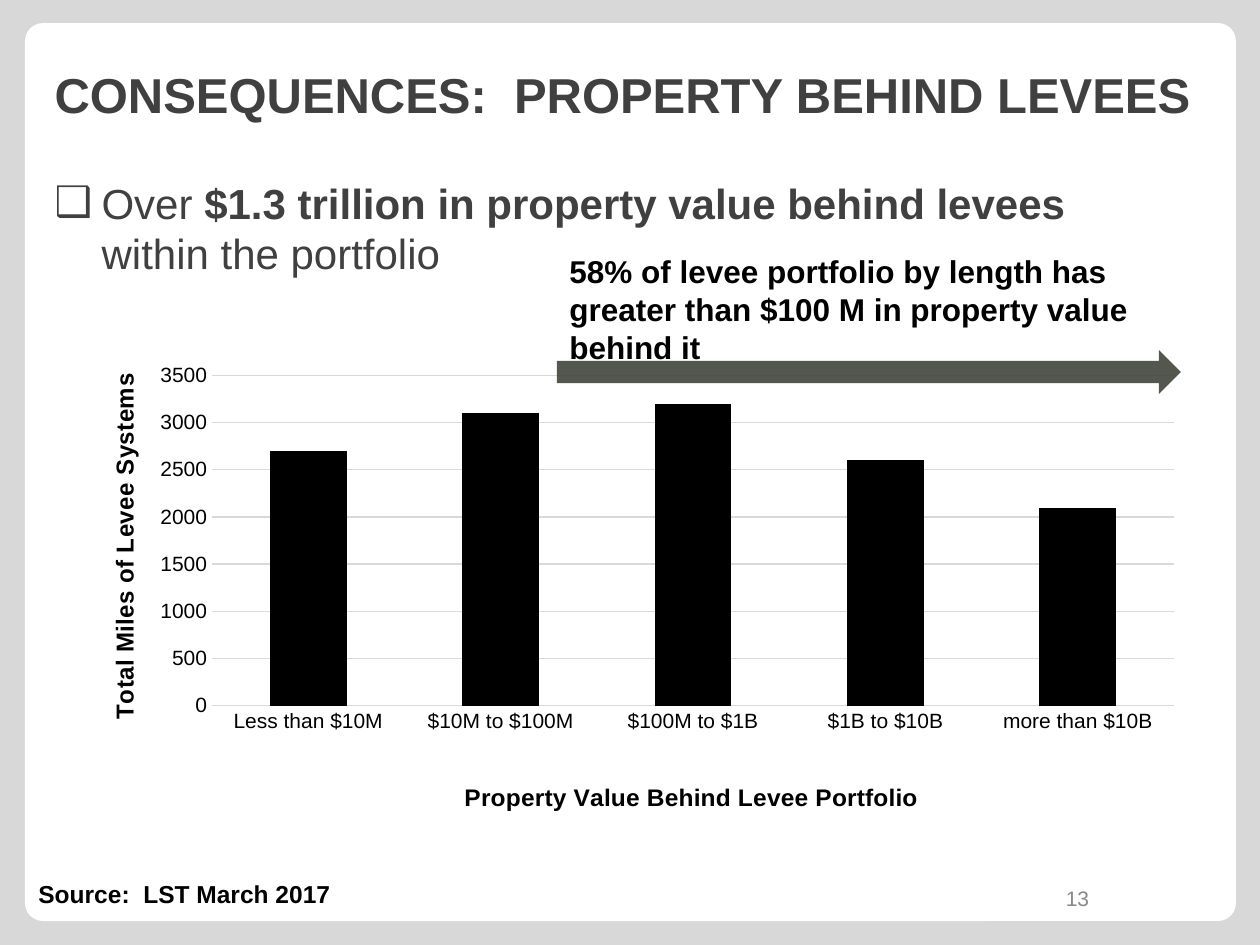
from lxml import etree
from pptx import Presentation, util as u
from pptx.chart.data import CategoryChartData
from pptx.dml.color import RGBColor
from pptx.enum import chart as charts, shapes, text
from pptx.oxml import parse_xml
from pptx.oxml.ns import nsdecls, qn

# Content: each paragraph is a list of (text, bold) runs
TITLE = [[("CONSEQUENCES:  PROPERTY BEHIND LEVEES", True)]]
BODY = [[("Over ", False),
         ("$1.3 trillion in property value behind levees ", True),
         ("within the portfolio", False)]]
CALLOUT = [[("58% of levee portfolio by length has", True)],
           [("greater than $100 M in property value behind it", True)]]
SOURCE = [[("Source:  LST March 2017", True)]]
PAGE_NUMBER = [[("13", False)]]
MILES = {"Less than $10M": 2700, "$10M to $100M": 3100, "$100M to $1B": 3200,
         "$1B to $10B": 2600, "more than $10B": 2100}
CATEGORY_TITLE = "Property Value Behind Levee Portfolio"
VALUE_TITLE = "Total Miles of Levee Systems"

FONT = "Arial"
BLACK, GREY, GRID = "000000", "404040", "D9D9D9"
CHART_BOX = (73, 357, 1124, 462)


def px(value):
    return u.Emu(round(value * 914400 / 126))


def color(value):
    return RGBColor.from_string(value)


def place(shape, box):
    shape.left, shape.top, shape.width, shape.height = map(px, box)


def set_font(font, size, fill=BLACK, bold=False):
    font.name, font.size, font.bold = FONT, u.Pt(size), bold
    font.color.rgb = color(fill)


def write(shape, paragraphs, size, fill=BLACK, align=text.PP_ALIGN.LEFT,
          anchor=text.MSO_ANCHOR.TOP, wrap=True, bullet=None, indent=0):
    frame = shape.text_frame
    frame.word_wrap, frame.vertical_anchor = wrap, anchor
    frame.auto_size = text.MSO_AUTO_SIZE.NONE
    for index, runs in enumerate(paragraphs):
        paragraph = frame.add_paragraph() if index else frame.paragraphs[0]
        paragraph.alignment, paragraph.space_before = align, u.Pt(0)
        if bullet:
            properties = paragraph._p.get_or_add_pPr()
            properties.set("marL", str(px(indent)))
            properties.set("indent", str(-px(indent)))
            etree.SubElement(properties, qn("a:buFont")).set("typeface", FONT)
            etree.SubElement(properties, qn("a:buChar")).set("char", bullet)
        for words, bold in runs:
            run = paragraph.add_run()
            run.text = words
            set_font(run.font, size, fill, bold)


def add_preset(slide, preset, box, fill):
    shape = slide.shapes.add_shape(preset, *map(px, box))
    shape.shadow.inherit = False
    shape.fill.solid()
    shape.fill.fore_color.rgb = color(fill)
    shape.line.fill.background()
    return shape


def chart_layout(left, top, width=None, height=None):
    """Manual layout from slide px, as fractions of the chart box."""
    chart_left, chart_top, chart_width, chart_height = CHART_BOX
    parts = {"xMode": "edge", "yMode": "edge",
             "x": round((left - chart_left) / chart_width, 4),
             "y": round((top - chart_top) / chart_height, 4)}
    if width:
        parts = {"layoutTarget": "inner", **parts,
                 "w": round(width / chart_width, 4), "h": round(height / chart_height, 4)}
    tags = "".join(f'<c:{name} val="{value}"/>' for name, value in parts.items())
    return parse_xml(f'<c:layout {nsdecls("c")}><c:manualLayout>{tags}'
                     '</c:manualLayout></c:layout>')


def format_axis(axis, title, left, top):
    axis.major_tick_mark = axis.minor_tick_mark = charts.XL_TICK_MARK.NONE
    set_font(axis.tick_labels.font, 12)
    frame = axis.axis_title.text_frame
    frame.text = title
    set_font(frame.paragraphs[0].runs[0].font, 14, bold=True)
    element = axis.axis_title._element
    for old in element.findall(qn("c:layout")):
        element.remove(old)
    element.find(qn("c:tx")).addnext(chart_layout(left, top))


def add_miles_chart(slide):
    data = CategoryChartData()
    data.categories = list(MILES)
    data.add_series("Series 1", list(MILES.values()))
    chart = slide.shapes.add_chart(charts.XL_CHART_TYPE.COLUMN_STACKED,
                                   *map(px, CHART_BOX), data).chart
    set_font(chart.font, 10)
    chart.has_legend = chart.has_title = False

    plot = chart.plots[0]
    plot.gap_width, plot.overlap, plot.vary_by_categories = 150, 100, False
    bars = plot.series[0].format.fill
    bars.solid()
    bars.fore_color.rgb = color(BLACK)

    category, value = chart.category_axis, chart.value_axis
    format_axis(category, CATEGORY_TITLE, 460, 785)
    format_axis(value, VALUE_TITLE, 104, 375)
    value.minimum_scale, value.maximum_scale, value.major_unit = 0, 3500, 500
    value.format.line.fill.background()
    for line in (category.format.line, value.major_gridlines.format.line):
        line.color.rgb, line.width = color(GRID), u.Pt(0.75)

    area = chart._chartSpace.chart.plotArea
    for old in area.findall(qn("c:layout")):
        area.remove(old)
    area.insert(0, chart_layout(212, 376, 962, 336))


def main():
    presentation = Presentation()
    presentation.slide_width, presentation.slide_height = px(1260), px(945)
    slide = presentation.slides.add_slide(presentation.slide_layouts[1])

    # Background and white card, the card behind the placeholders
    slide.background.fill.solid()
    slide.background.fill.fore_color.rgb = color("D8D8D8")
    card = add_preset(slide, shapes.MSO_SHAPE.ROUNDED_RECTANGLE,
                      (25, 23, 1211, 898), "FFFFFF")
    card.adjustments[0] = 0.02
    slide.shapes._spTree.insert(2, card._element)

    # Chart
    add_miles_chart(slide)

    # Title and bullet
    title, body = slide.placeholders
    place(title, (42, 38, 1174, 111))
    write(title, TITLE, 28, GREY, anchor=text.MSO_ANCHOR.MIDDLE)
    place(body, (42, 171, 1155, 648))
    write(body, BODY, 24, GREY, bullet="❑", indent=47)

    # Arrow over the three highest value classes
    arrow = add_preset(slide, shapes.MSO_SHAPE.RIGHT_ARROW,
                       (557, 350, 624, 44), "3F4339")
    fill_color = arrow._element.spPr.find(qn("a:solidFill"))[0]
    etree.SubElement(fill_color, qn("a:alpha")).set("val", "89000")

    # Callout, source and page number
    for box, words, size, options in (
            ((557, 246, 624, 127), CALLOUT, 18, {}),
            ((26, 873, 319, 43), SOURCE, 14, {"wrap": False}),
            ((1027, 873, 101, 50), PAGE_NUMBER, 12,
             {"fill": "898989", "align": text.PP_ALIGN.CENTER,
              "anchor": text.MSO_ANCHOR.MIDDLE})):
        write(slide.shapes.add_textbox(*map(px, box)), words, size, **options)

    presentation.save("out.pptx")


if __name__ == "__main__":
    main()
